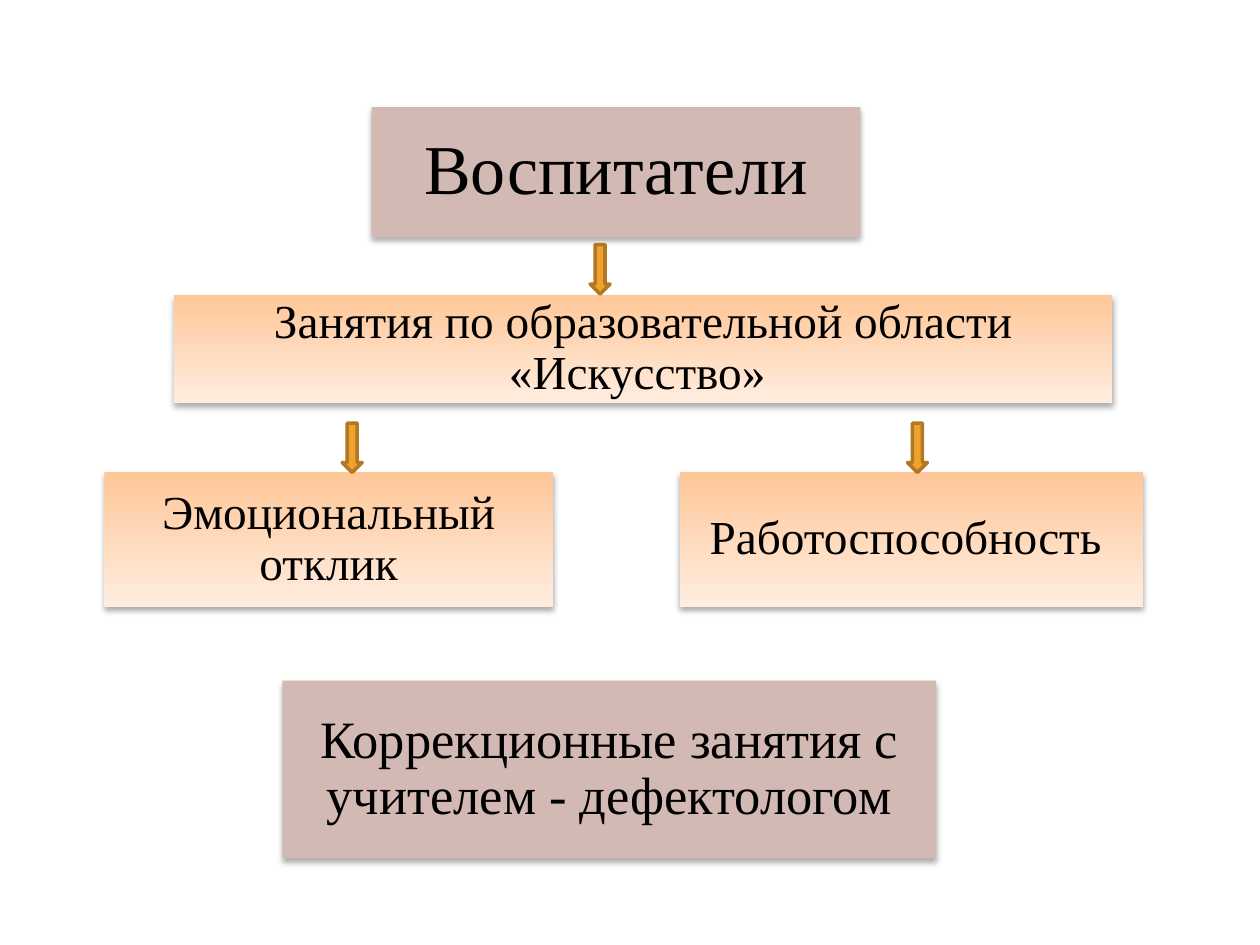
from dataclasses import dataclass

from lxml.etree import SubElement
from pptx import Presentation
from pptx.dml.color import RGBColor
from pptx.enum.shapes import MSO_SHAPE
from pptx.enum.text import MSO_ANCHOR, MSO_AUTO_SIZE, PP_ALIGN
from pptx.oxml.ns import qn
from pptx.util import Pt


@dataclass(frozen=True)
class Theme:
    font: str = "Times New Roman"
    text: str = "000000"
    heading_fill: str = "D3B9B3"
    gradient: tuple = ("FFC798", "FFEDE0")
    arrow_fill: str = "F0A22E"
    arrow_line: str = "B27822"
    title_size: int = 40
    heading_size: int = 30
    body_size: int = 27


theme = Theme()


def write_text(shape, text, size, inset):
    frame = shape.text_frame
    frame.word_wrap = True
    frame.auto_size = MSO_AUTO_SIZE.NONE
    frame.vertical_anchor = MSO_ANCHOR.MIDDLE
    frame.margin_left = frame.margin_right = Pt(inset)
    frame.margin_top = frame.margin_bottom = Pt(inset)
    paragraph = frame.paragraphs[0]
    paragraph.alignment = PP_ALIGN.CENTER
    paragraph.line_spacing = 0.9
    run = paragraph.add_run()
    run.text = text
    run.font.name = theme.font
    run.font.size = Pt(size)
    run.font.color.rgb = RGBColor.from_string(theme.text)


def style_box(shape, color=None):
    """Fill with a color, or with the theme gradient, and add a soft shadow."""
    if color:
        shape.fill.solid()
        shape.fill.fore_color.rgb = RGBColor.from_string(color)
    else:
        shape.fill.gradient()
        shape.fill.gradient_angle = 270
        for stop, stop_color in zip(shape.fill.gradient_stops, theme.gradient):
            stop.color.rgb = RGBColor.from_string(stop_color)
        for stop, position in zip(shape.fill.gradient_stops, (0, 1)):
            stop.position = position
    shape.line.fill.background()
    shape.shadow.inherit = False
    effects = shape._element.spPr.find(qn("a:effectLst"))
    shadow = SubElement(effects, qn("a:outerShdw"), blurRad=str(Pt(3.5)),
                        dist=str(Pt(2.2)), dir="5400000", rotWithShape="0")
    shadow_color = SubElement(shadow, qn("a:srgbClr"), val="000000")
    SubElement(shadow_color, qn("a:alpha"), val="32000")


presentation = Presentation()
presentation.slide_width, presentation.slide_height = Pt(720), Pt(540)
slide = presentation.slides.add_slide(presentation.slide_layouts[5])

# Title box
title = slide.shapes.title
title.left, title.top, title.width, title.height = Pt(212.4), Pt(61.2), Pt(279.2), Pt(74.2)
style_box(title, theme.heading_fill)
write_text(title, "Воспитатели", theme.title_size, inset=12)

# Other boxes: text, left, top, width, height, fill, size, inset
boxes = [
    ("Коррекционные занятия с учителем - дефектологом",
     161.4, 389, 373.6, 101.4, theme.heading_fill, theme.heading_size, 9),
    ("Занятия по образовательной области «Искусство» ",
     99.4, 168.5, 536.2, 61.6, None, theme.body_size, 8),
    ("Эмоциональный отклик", 59.6, 269.8, 256.4, 77, None, theme.body_size, 8),
    ("Работоспособность ", 388.4, 269.8, 265, 77, None, theme.body_size, 8),
]
for text, left, top, width, height, color, size, inset in boxes:
    box = slide.shapes.add_shape(MSO_SHAPE.RECTANGLE, Pt(left), Pt(top), Pt(width), Pt(height))
    style_box(box, color)
    write_text(box, text, size, inset)

# Down arrows between the levels
for left, top in [(337.2, 139.8), (195.6, 241.8), (518.6, 241.8)]:
    arrow = slide.shapes.add_shape(MSO_SHAPE.DOWN_ARROW, Pt(left), Pt(top), Pt(11.4), Pt(28.2))
    arrow.shadow.inherit = False
    arrow.fill.solid()
    arrow.fill.fore_color.rgb = RGBColor.from_string(theme.arrow_fill)
    arrow.line.color.rgb = RGBColor.from_string(theme.arrow_line)
    arrow.line.width = Pt(2)

presentation.save("out.pptx")
